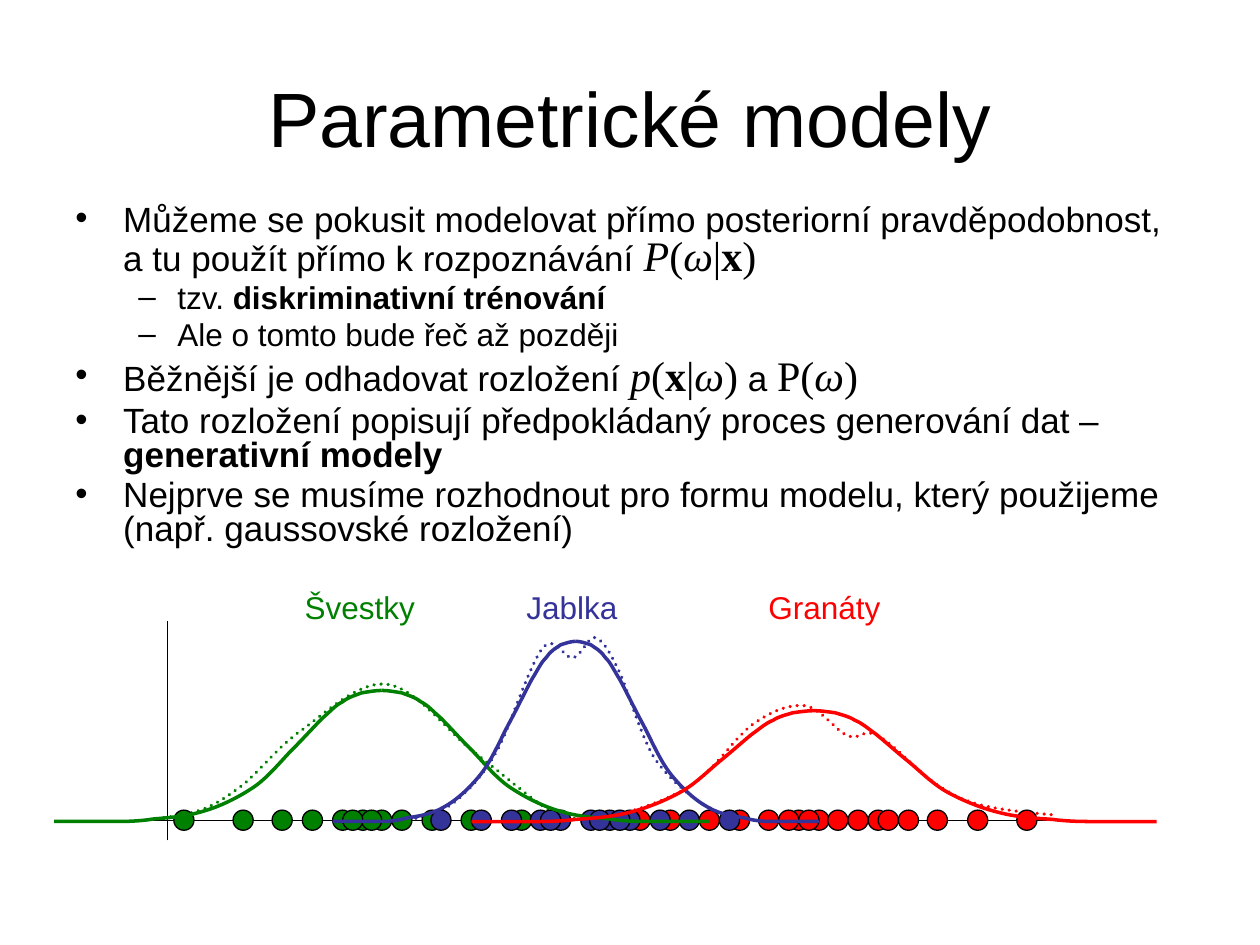
"""Build a slide on parametric models with three fruit distributions."""
from dataclasses import dataclass

from pptx import Presentation
from pptx import util as u
from pptx.dml import color
from pptx.enum import dml, shapes, text
from pptx.oxml import ns, xmlchemy

PX = 9144
Point = tuple[float, float]


@dataclass(frozen=True)
class Theme:
    ink: str = "000000"
    plum: str = "008000"
    apple: str = "333399"
    garnet: str = "FF0000"
    sans: str = "Arial"
    serif: str = "Times New Roman"
    title: int = 44
    body: int = 20
    small: int = 18
    formula: int = 24
    thin: float = 0.75
    curve: float = 2
    leading: float = 0.8
    gap: float = 0.2


THEME = Theme()


@dataclass(frozen=True)
class Run:
    words: str
    size: int = THEME.body
    font: str = THEME.sans
    bold: bool = False
    italic: bool = False
    ink: str = THEME.ink


@dataclass(frozen=True)
class Bullet:
    runs: tuple[Run, ...]
    mark: str = "•"
    indent: int = 38
    hanging: int = 38


@dataclass(frozen=True)
class Box:
    left: int
    top: int
    width: int
    height: int


@dataclass(frozen=True)
class Label:
    run: Run
    box: Box


@dataclass(frozen=True)
class Bell:
    ink: str
    peak: int
    half_width: int
    height: int


@dataclass(frozen=True)
class Estimate:
    ink: str
    points: tuple[Point, ...]


@dataclass(frozen=True)
class Samples:
    ink: str
    lefts: tuple[int, ...]


def formula(words: str, bold: bool = False, italic: bool = False) -> Run:
    return Run(words, THEME.formula, THEME.serif, bold, italic)


def sub_bullet(words: str, strong: str = "") -> Bullet:
    runs = [Run(words, THEME.small)]
    if strong:
        runs.append(Run(strong, THEME.small, bold=True))
    return Bullet(tuple(runs), "–", 81, 31)


BULLETS = (
    Bullet((
        Run("Můžeme se pokusit modelovat přímo posteriorní pravděpodobnost, "
            "a tu použít přímo k rozpoznávání "),
        formula("P", italic=True), formula("("), formula("ω", italic=True),
        formula("|"), formula("x", bold=True), formula(")"))),
    sub_bullet("tzv. ", "diskriminativní trénování"),
    sub_bullet("Ale o tomto bude řeč až později"),
    Bullet((
        Run("Běžnější je odhadovat rozložení "),
        formula("p", italic=True), formula("("), formula("x", bold=True),
        formula("|"), formula("ω", italic=True), formula(")"), Run(" a "),
        formula("P("), formula("ω", italic=True), formula(")"))),
    Bullet((
        Run("Tato rozložení popisují předpokládaný proces generování dat – "),
        Run("generativní modely", bold=True))),
    Bullet((
        Run("Nejprve se musíme rozhodnout pro formu modelu, který použijeme "
            "(např. gaussovské rozložení)"),)),
)

PLUM_LABEL = Label(Run("Švestky", THEME.small, ink=THEME.plum), Box(232, 462, 110, 40))
APPLE_LABEL = Label(Run("Jablka", THEME.small, ink=THEME.apple), Box(408, 462, 102, 40))
GARNET_LABEL = Label(Run("Granáty", THEME.small, ink=THEME.garnet), Box(600, 462, 110, 40))

APPLE_ESTIMATE = Estimate(THEME.apple, (
    (319, 648), (324, 649), (329, 651), (336, 648), (344, 646), (356, 642), (366, 632),
    (376, 623), (385, 613), (396, 593), (406, 573), (421, 526), (431, 514),
    (441, 503), (448, 524), (455, 522), (461, 521), (467, 505), (472, 506),
    (478, 508), (482, 514), (490, 530), (498, 546), (508, 583), (519, 601),
    (531, 619), (549, 633), (561, 640), (573, 648), (582, 648), (590, 648)))
GARNET_ESTIMATE = Estimate(THEME.garnet, (
    (466, 647), (471, 649), (476, 651), (490, 647), (504, 643), (531, 635), (549, 623),
    (567, 611), (582, 587), (596, 576), (611, 565), (625, 559), (638, 560),
    (651, 561), (663, 580), (673, 584), (683, 588), (685, 577), (697, 584),
    (709, 590), (730, 614), (744, 623), (758, 632), (764, 635), (779, 639),
    (795, 643), (817, 645), (839, 647)))
PLUM_ESTIMATE = Estimate(THEME.plum, (
    (130, 649), (140, 648), (151, 646), (162, 642), (172, 638), (181, 632), (194, 622),
    (206, 612), (218, 596), (236, 582), (255, 569), (283, 541), (306, 543),
    (329, 545), (354, 579), (375, 596), (396, 612), (420, 633), (434, 642),
    (448, 651), (454, 650), (460, 649)))

BASELINE = 652
BELL_WIDTH, BELL_HEIGHT = 260, 104
BELL_PROFILE = (
    (260, 0), (248, 0), (236, 0), (228, 0), (220, 0), (220, 0), (212, 0),
    (205, 0), (193, 0), (181, 2), (169, 3), (155, 4), (142, 8),
    (128, 12), (114, 19), (102, 27), (90, 35), (80, 48), (71, 57),
    (62, 66), (54, 75), (47, 82), (40, 88), (37, 92), (31, 95),
    (26, 99), (21, 100), (16, 102), (10, 103), (5, 104), (0, 104))
BELLS = (Bell(THEME.plum, 303, 260, 104), Bell(THEME.apple, 457, 193, 143),
         Bell(THEME.garnet, 646, 272, 88))

DOT_TOP, DOT_SIZE = 643, 16
SAMPLES = (
    Samples(THEME.garnet, (500, 524, 555, 579, 626, 618, 642, 602, 657, 689, 697,
                           713, 736, 768, 807, 673, 634)),
    Samples(THEME.plum, (280, 295, 406, 366, 335, 311, 264, 240, 216, 185, 138, 287, 272)),
    Samples(THEME.apple, (421, 437, 461, 476, 492, 516, 539, 571, 398, 374, 342,
                          429, 468, 484)),
)


def rgb(ink: str) -> color.RGBColor:
    return color.RGBColor.from_string(ink)


def add_run(paragraph, run: Run) -> None:
    piece = paragraph.add_run()
    piece.text = run.words
    font = piece.font
    font.name, font.size = run.font, u.Pt(run.size)
    font.bold, font.italic = run.bold, run.italic
    font.color.rgb = rgb(run.ink)


def add_frame(canvas, box: Box):
    frame = canvas.add_textbox(*(n * PX for n in (box.left, box.top, box.width, box.height))).text_frame
    frame.word_wrap = True
    return frame


def add_label(canvas, label: Label) -> None:
    add_run(add_frame(canvas, label.box).paragraphs[0], label.run)


def add_bullet(paragraph, bullet: Bullet) -> None:
    paragraph.line_spacing = THEME.leading
    paragraph.space_before = u.Pt(THEME.gap * bullet.runs[0].size)
    props = paragraph._p.get_or_add_pPr()
    props.set("marL", str(bullet.indent * PX))
    props.set("indent", str(-bullet.hanging * PX))
    for tag, key, value in (("a:buFont", "typeface", THEME.sans), ("a:buChar", "char", bullet.mark)):
        mark = xmlchemy.OxmlElement(tag)
        mark.set(key, value)
        props.append(mark)
    for run in bullet.runs:
        add_run(paragraph, run)


def add_axis(canvas, start: Point, end: Point) -> None:
    axis = canvas.add_connector(shapes.MSO_CONNECTOR.STRAIGHT, *(n * PX for n in start + end))
    axis.line.color.rgb = rgb(THEME.ink)
    axis.line.width = u.Pt(THEME.thin)
    axis._element.spPr.append(xmlchemy.OxmlElement("a:effectLst"))


def add_curve(canvas, points: tuple[Point, ...], ink: str):
    track = [(x * PX, y * PX) for x, y in points]
    builder = canvas.build_freeform(*track[0])
    builder.add_line_segments(track[1:], close=False)
    curve = builder.convert_to_shape()
    segments = list(curve._element.iter(ns.qn("a:lnTo")))
    for first in range(0, len(segments), 3):
        bend = xmlchemy.OxmlElement("a:cubicBezTo")
        segments[first].addprevious(bend)
        for segment in segments[first:first + 3]:
            bend.append(segment[0])
            segment.getparent().remove(segment)
    curve.shadow.inherit = False
    curve.fill.background()
    curve.line.color.rgb = rgb(ink)
    curve.line.width = u.Pt(THEME.curve)
    return curve


def add_estimate(canvas, estimate: Estimate) -> None:
    curve = add_curve(canvas, estimate.points, estimate.ink)
    curve.line.dash_style = dml.MSO_LINE.ROUND_DOT
    curve._element.spPr.get_or_add_ln().set("cap", "rnd")


def add_bell(canvas, bell: Bell) -> None:
    for side in (-1, 1):
        points = tuple((bell.peak + side * x * bell.half_width / BELL_WIDTH,
                        BASELINE - y * bell.height / BELL_HEIGHT) for x, y in BELL_PROFILE)
        add_curve(canvas, points, bell.ink)


def add_samples(canvas, samples: Samples) -> None:
    for left in samples.lefts:
        dot = canvas.add_shape(shapes.MSO_SHAPE.FLOWCHART_CONNECTOR,
                               *(n * PX for n in (left, DOT_TOP, DOT_SIZE, DOT_SIZE)))
        dot.shadow.inherit = False
        dot.fill.solid()
        dot.fill.fore_color.rgb = rgb(samples.ink)
        dot.line.color.rgb = rgb(THEME.ink)
        dot.line.width = u.Pt(THEME.thin)


def main() -> None:
    deck = Presentation()
    deck.slide_width, deck.slide_height = 1000 * PX, 750 * PX
    slide = deck.slides.add_slide(deck.slide_layouts[6])

    title = add_frame(slide.shapes, Box(50, 30, 900, 125))
    title.vertical_anchor = text.MSO_ANCHOR.MIDDLE
    title.paragraphs[0].alignment = text.PP_ALIGN.CENTER
    add_run(title.paragraphs[0], Run("Parametrické modely", THEME.title))

    plot = slide.shapes.add_group_shape().shapes
    add_axis(plot, (75, 651), (902, 651))
    add_estimate(plot, APPLE_ESTIMATE)
    add_estimate(plot, GARNET_ESTIMATE)
    add_label(plot, APPLE_LABEL)
    add_label(plot, GARNET_LABEL)
    add_axis(plot, (133, 667), (133, 493))
    add_estimate(plot, PLUM_ESTIMATE)
    for samples in SAMPLES:
        add_samples(plot, samples)
    for bell in BELLS:
        add_bell(plot, bell)

    body = add_frame(slide.shapes, Box(50, 158, 900, 325))
    for index, bullet in enumerate(BULLETS):
        add_bullet(body.add_paragraph() if index else body.paragraphs[0], bullet)
    add_label(slide.shapes, PLUM_LABEL)

    deck.save("out.pptx")


if __name__ == "__main__":
    main()
